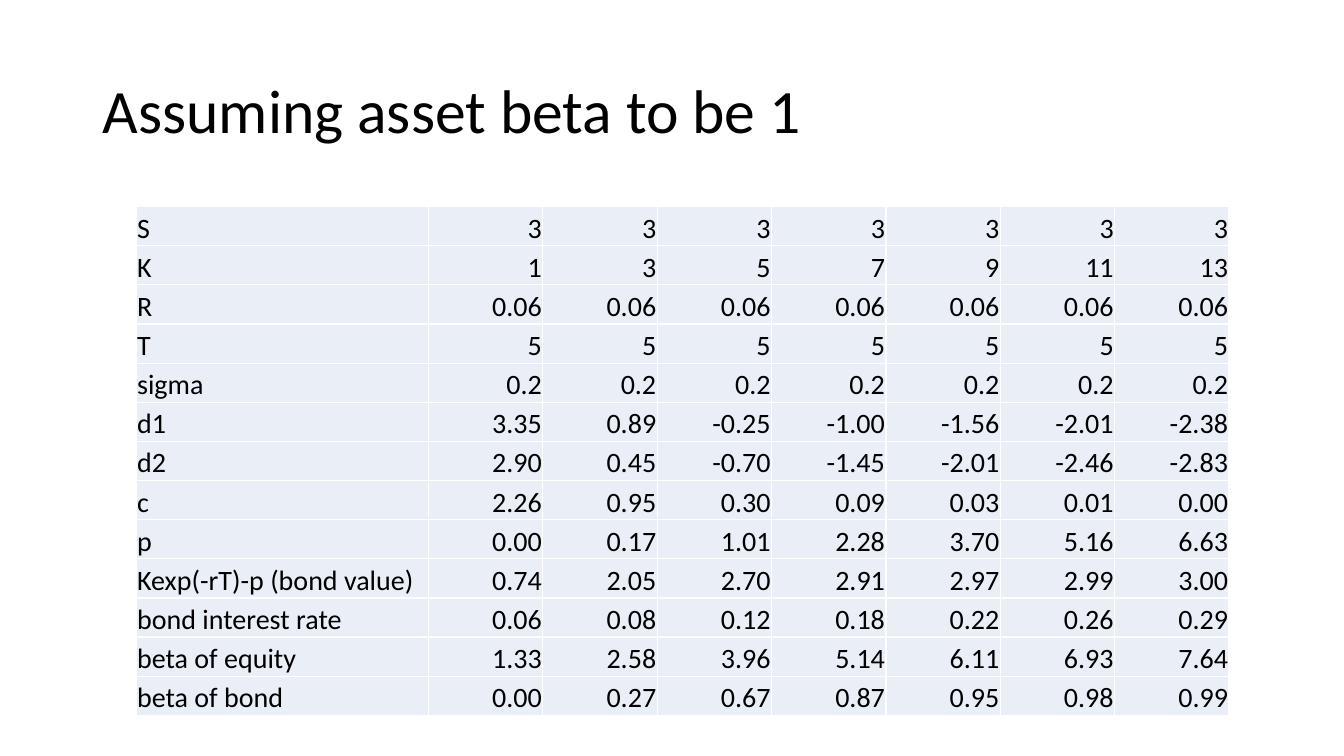
from lxml.etree import SubElement
from pptx import Presentation
from pptx.dml.color import RGBColor
from pptx.enum.text import MSO_ANCHOR, MSO_AUTO_SIZE, PP_ALIGN
from pptx.oxml.ns import qn
from pptx.util import Inches, Pt

COLORS = {"text": "000000", "cell": "EAEFF7", "border": "FFFFFF"}
FONT = "Calibri"
TITLE_BOX = {"left": 0.92, "top": 0.4, "width": 11.5, "height": 1.45}
TABLE_BOX = {"left": 1.35, "top": 2.05, "width": 10.84, "height": 5.05}
LABEL_WIDTH = 2.9
CELL_FORMAT = {
    "margin_left": Inches(0.01),
    "margin_right": Inches(0.01),
    "margin_top": Inches(0.01),
    "margin_bottom": 0,
    "vertical_anchor": MSO_ANCHOR.BOTTOM,
}
TITLE_FORMAT = {
    "word_wrap": True,
    "auto_size": MSO_AUTO_SIZE.NONE,
    "vertical_anchor": MSO_ANCHOR.MIDDLE,
}
OPTION_ROWS = [
    ("S", ["3"] * 7),
    ("K", ["1", "3", "5", "7", "9", "11", "13"]),
    ("R", ["0.06"] * 7),
    ("T", ["5"] * 7),
    ("sigma", ["0.2"] * 7),
    ("d1", ["3.35", "0.89", "-0.25", "-1.00", "-1.56", "-2.01", "-2.38"]),
    ("d2", ["2.90", "0.45", "-0.70", "-1.45", "-2.01", "-2.46", "-2.83"]),
    ("c", ["2.26", "0.95", "0.30", "0.09", "0.03", "0.01", "0.00"]),
    ("p", ["0.00", "0.17", "1.01", "2.28", "3.70", "5.16", "6.63"]),
    ("Kexp(-rT)-p (bond value)", ["0.74", "2.05", "2.70", "2.91", "2.97", "2.99", "3.00"]),
    ("bond interest rate", ["0.06", "0.08", "0.12", "0.18", "0.22", "0.26", "0.29"]),
    ("beta of equity", ["1.33", "2.58", "3.96", "5.14", "6.11", "6.93", "7.64"]),
    ("beta of bond", ["0.00", "0.27", "0.67", "0.87", "0.95", "0.98", "0.99"]),
]


def set_attrs(target, values):
    for name, value in values.items():
        setattr(target, name, value)


def write_text(tf, text, size, align):
    p = tf.paragraphs[0]
    p.alignment = align
    r = p.add_run()
    r.text = text
    set_attrs(r.font, {"name": FONT, "size": Pt(size)})
    r.font.color.rgb = RGBColor.from_string(COLORS["text"])
    return p


def add_title(s, text):
    sp = s.shapes.title
    set_attrs(sp, {name: Inches(value) for name, value in TITLE_BOX.items()})
    set_attrs(sp.text_frame, TITLE_FORMAT)
    write_text(sp.text_frame, text, 44, PP_ALIGN.LEFT).line_spacing = 0.9


def add_borders(cell):
    tc_pr = cell._tc.get_or_add_tcPr()
    for side in ("lnL", "lnR", "lnT", "lnB"):
        line = SubElement(tc_pr, qn(f"a:{side}"), w=str(Pt(1)))
        fill = SubElement(line, qn("a:solidFill"))
        SubElement(fill, qn("a:srgbClr"), val=COLORS["border"])


def format_cell(cell, text, align):
    set_attrs(cell, CELL_FORMAT)
    write_text(cell.text_frame, text, 20, align)
    add_borders(cell)
    cell.fill.solid()
    cell.fill.fore_color.rgb = RGBColor.from_string(COLORS["cell"])


def add_option_table(s, rows):
    value_count = len(rows[0][1])
    box = {name: Inches(value) for name, value in TABLE_BOX.items()}
    table = s.shapes.add_table(len(rows), value_count + 1, **box).table
    set_attrs(table, {"first_row": False, "horz_banding": False})
    value_width = (TABLE_BOX["width"] - LABEL_WIDTH) / value_count
    for i, column in enumerate(table.columns):
        column.width = Inches(value_width if i else LABEL_WIDTH)
    for i, (label, values) in enumerate(rows):
        table.rows[i].height = Inches(TABLE_BOX["height"] / len(rows))
        for j, text in enumerate([label, *values]):
            align = PP_ALIGN.RIGHT if j else PP_ALIGN.LEFT
            format_cell(table.cell(i, j), text, align)


def main():
    prs = Presentation()
    set_attrs(prs, {"slide_width": Inches(13.33), "slide_height": Inches(7.5)})
    s = prs.slides.add_slide(prs.slide_layouts[5])
    add_title(s, "Assuming asset beta to be 1")
    add_option_table(s, OPTION_ROWS)
    prs.save("out.pptx")


if __name__ == "__main__":
    main()
